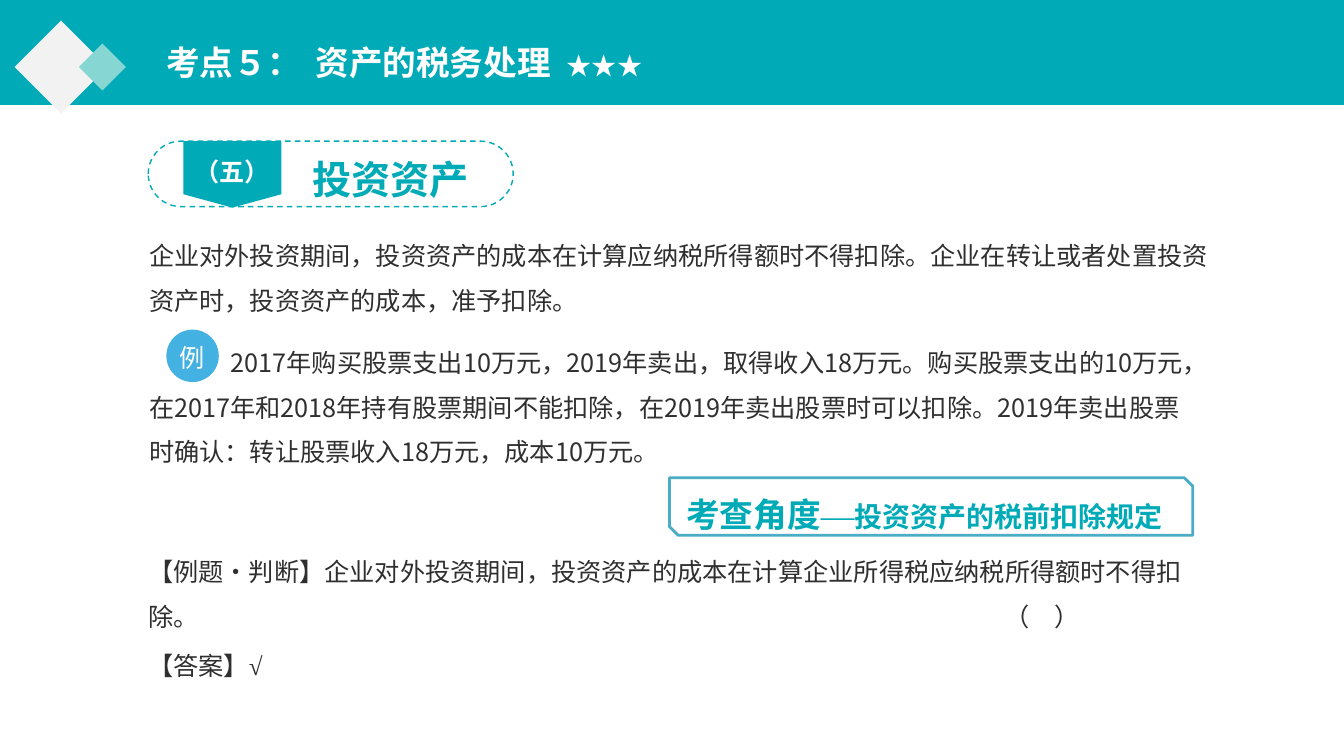
from lxml import etree
from pptx import Presentation
from pptx.dml.color import RGBColor
from pptx.enum.dml import MSO_LINE
from pptx.enum.shapes import MSO_SHAPE
from pptx.enum.text import MSO_ANCHOR, MSO_AUTO_SIZE, PP_ALIGN
from pptx.oxml.ns import qn
from pptx.util import Inches, Pt

RECTANGLE = MSO_SHAPE.RECTANGLE
DASH = MSO_LINE.DASH
TOP, MIDDLE = MSO_ANCHOR.TOP, MSO_ANCHOR.MIDDLE
LEFT, CENTER = PP_ALIGN.LEFT, PP_ALIGN.CENTER

SANS = "Noto Sans CJK SC"
SERIF = "Times New Roman"
TEAL, WHITE, INK = "00AAB7", "FFFFFF", "2F2F2F"
BODY_LINE = 32


def color(hex_value):
    return RGBColor.from_string(hex_value)


def add_shape(slide, kind, box, fill=None, line=None, width=1, dash=None,
              rotation=0, adjustments=()):
    shape = slide.shapes.add_shape(kind, *map(Inches, box))
    shape.shadow.inherit = False
    shape.rotation = rotation
    for index, value in enumerate(adjustments):
        shape.adjustments[index] = value
    if fill:
        shape.fill.solid()
        shape.fill.fore_color.rgb = color(fill)
    else:
        shape.fill.background()
    if line:
        shape.line.color.rgb = color(line)
        shape.line.width = Pt(width)
        shape.line.dash_style = dash
    else:
        shape.line.fill.background()
    return shape


def add_run(paragraph, text, size=18, hex_color=INK, bold=False, font=SANS):
    run = paragraph.add_run()
    run.text = text
    run.font.size = Pt(size)
    run.font.bold = bold
    run.font.name = font
    run.font.color.rgb = color(hex_color)
    properties = run.font._element
    east_asian = etree.SubElement(properties, qn("a:ea"))
    east_asian.set("typeface", font)


def set_text(shape, runs, line=None, align=LEFT, anchor=TOP, indent=0, tabs=()):
    """Fill a shape with one paragraph; runs are (text, format) pairs."""
    frame = shape.text_frame
    frame.word_wrap = True
    frame.auto_size = MSO_AUTO_SIZE.NONE
    frame.vertical_anchor = anchor
    paragraph = frame.paragraphs[0]
    paragraph.alignment = align
    if line:
        paragraph.line_spacing = Pt(line)
    properties = paragraph._p.get_or_add_pPr()
    if indent:
        properties.set("marL", "0")
        properties.set("indent", str(Inches(indent)))
    if tabs:
        tab_list = etree.SubElement(properties, qn("a:tabLst"))
        for position in tabs:
            etree.SubElement(tab_list, qn("a:tab"),
                             pos=str(Inches(position)), algn="l")
    for text, style in runs:
        add_run(paragraph, text, **style)


def add_text(slide, box, runs, **layout):
    set_text(slide.shapes.add_textbox(*map(Inches, box)), runs, **layout)


def add_header(slide):
    add_shape(slide, RECTANGLE, (0, 0, 13.33, 1.04), fill=TEAL)
    add_shape(slide, RECTANGLE, (0.28, 0.34, 0.65, 0.65), fill="F2F2F2", rotation=45)
    add_shape(slide, RECTANGLE, (0.85, 0.5, 0.33, 0.33), fill="86D7D4", rotation=45)
    title = slide.shapes.title
    title.left, title.top, title.width, title.height = map(
        Inches, (1.55, 0.33, 5.22, 0.5))
    set_text(title, [
        ("考点５：\t资产的税务处理\t", dict(size=24, hex_color=WHITE, bold=True)),
        ("★★★", dict(size=18, hex_color=WHITE, bold=True, font=SERIF)),
    ], line=31.5, tabs=(1.48, 3.97))
    # Bring the title in front of the band
    slide.shapes._spTree.append(title._element)


def add_section_label(slide):
    add_shape(slide, MSO_SHAPE.ROUNDED_RECTANGLE, (1.47, 1.4, 3.62, 0.65),
              line=TEAL, dash=DASH, adjustments=(0.5,))
    badge = add_shape(slide, MSO_SHAPE.FLOWCHART_OFFPAGE_CONNECTOR,
                      (1.82, 1.4, 0.97, 0.66), fill=TEAL)
    badge.text_frame.margin_top = Inches(0.12)
    set_text(badge, [("（五）", dict(hex_color=WHITE, bold=True))],
             align=CENTER, anchor=MIDDLE)
    add_text(slide, (3, 1.45, 1.9, 0.57),
             [("投资资产", dict(size=28, hex_color=TEAL, bold=True))], line=36.5)


def add_example(slide):
    add_text(slide, (1.38, 3.25, 10.61, 1.41), [(
        "2017年购买股票支出10万元，2019年卖出，取得收入18万元。购买股票支出的10万元，"
        "在2017年和2018年持有股票期间不能扣除，在2019年卖出股票时可以扣除。"
        "2019年卖出股票时确认：转让股票收入18万元，成本10万元。", {})],
        line=BODY_LINE, indent=0.81)
    add_shape(slide, MSO_SHAPE.OVAL, (1.65, 3.27, 0.52, 0.52), fill="43B2E2")
    add_text(slide, (1.68, 3.33, 0.5, 0.39), [("例", dict(hex_color=WHITE))], line=23)


def add_exam_angle(slide):
    add_text(slide, (6.71, 4.74, 5.1, 0.57), [
        ("考查角度", dict(size=24, hex_color=TEAL, bold=True)),
        ("—", dict(size=24, hex_color=TEAL, font=SERIF)),
        ("投资资产的税前扣除规定", dict(size=20, hex_color=TEAL, bold=True)),
    ], line=37)
    add_shape(slide, MSO_SHAPE.SNIP_2_DIAG_RECTANGLE, (6.64, 4.74, 5.19, 0.57),
              line="4BACC6", width=2, adjustments=(0, 0.148))


def add_question(slide):
    add_text(slide, (1.37, 5.33, 10.56, 1.01), [(
        "【例题·判断】企业对外投资期间，投资资产的成本在计算企业所得税应纳税所得额时"
        "不得扣除。\t（　）", {})], line=BODY_LINE, tabs=(8.49,))
    add_text(slide, (1.37, 6.38, 1.54, 0.39),
             [("【答案】", {}), ("√", dict(font=SERIF))], line=23.5)


def main():
    presentation = Presentation()
    presentation.slide_width = Inches(13.33)
    presentation.slide_height = Inches(7.5)
    slide = presentation.slides.add_slide(presentation.slide_layouts[5])

    add_header(slide)
    add_section_label(slide)
    # Rule on investment assets
    add_text(slide, (1.38, 2.19, 10.71, 0.97), [(
        "企业对外投资期间，投资资产的成本在计算应纳税所得额时不得扣除。"
        "企业在转让或者处置投资资产时，投资资产的成本，准予扣除。", {})], line=BODY_LINE)
    add_example(slide)
    add_exam_angle(slide)
    add_question(slide)

    presentation.save("out.pptx")


if __name__ == "__main__":
    main()
